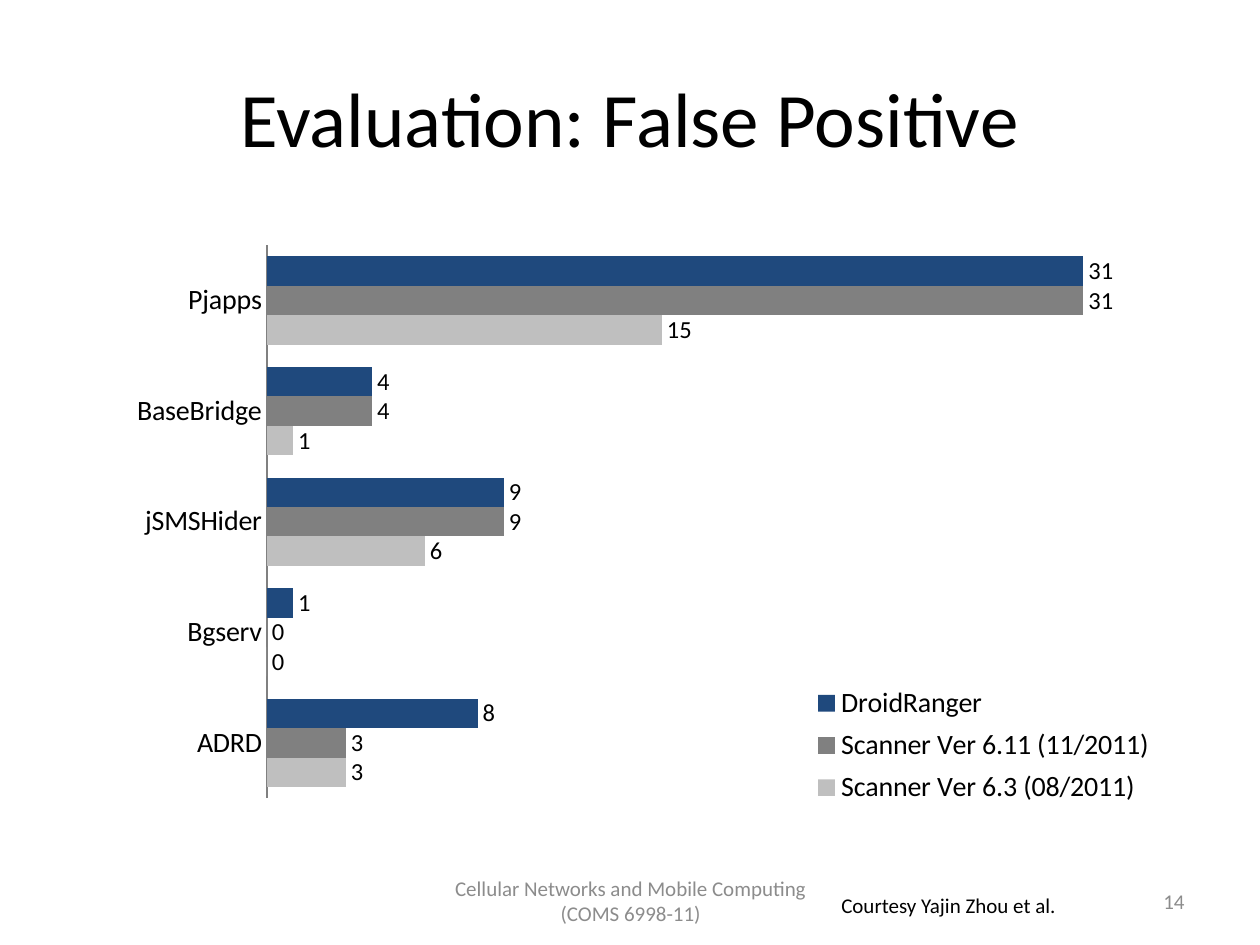
from dataclasses import dataclass
from typing import Any

from lxml import etree
from pptx import Presentation
from pptx import util as u
from pptx.chart.data import CategoryChartData
from pptx.dml.color import RGBColor
from pptx.enum import chart as chart_enum
from pptx.enum import text

FONT = "Calibri"
COLORS = {
    "text": "000000",
    "muted": "8C8C8C",
    "axis": "808080",
    "old_version": "BFBFBF",
    "new_version": "808080",
    "droid_ranger": "1F497D",
}
PLOT_LAYOUT = {"x": 0.176, "y": 0, "w": 0.822, "h": 0.945}
LEGEND_LAYOUT = {"x": 0.64, "y": 0.74, "w": 0.35, "h": 0.23}
CATEGORIES = ["ADRD", "Bgserv", "jSMSHider", "BaseBridge", "Pjapps"]


@dataclass(frozen=True)
class Box:
    left: float
    top: float
    width: float
    height: float

    def lengths(self) -> tuple:
        return tuple(u.Cm(value) for value in
                     (self.left, self.top, self.width, self.height))


@dataclass(frozen=True)
class Label:
    content: str
    box: Box
    color: str
    alignment: Any
    anchor: Any
    wrap: bool = True


@dataclass(frozen=True)
class Detector:
    name: str
    values: tuple
    color: str


DETECTORS = [
    Detector("Scanner Ver 6.3 (08/2011)", (3, 0, 6, 1, 15), "old_version"),
    Detector("Scanner Ver 6.11 (11/2011)", (3, 0, 9, 4, 31), "new_version"),
    Detector("DroidRanger", (8, 1, 9, 4, 31), "droid_ranger"),
]
LABELS = [
    Label("Cellular Networks and Mobile Computing (COMS 6998-11)",
          Box(8.69, 17.65, 8.05, 1.02), "muted",
          text.PP_ALIGN.CENTER, text.MSO_ANCHOR.MIDDLE),
    Label("14", Box(18.21, 17.65, 5.92, 1.02), "muted",
          text.PP_ALIGN.RIGHT, text.MSO_ANCHOR.MIDDLE),
    Label("Courtesy Yajin Zhou et al.", Box(16.71, 17.86, 4.93, 0.76), "text",
          text.PP_ALIGN.LEFT, text.MSO_ANCHOR.TOP, False),
]


def apply_format(target: Any, values: dict) -> None:
    for name, value in values.items():
        setattr(target, name, value)


def format_font(font: Any, size: int, color: str = "text") -> None:
    apply_format(font, {"name": FONT, "size": u.Pt(size), "bold": False})
    font.color.rgb = RGBColor.from_string(COLORS[color])


def write_text(shape: Any, content: str, size: int, color: str,
               alignment: Any, anchor: Any, wrap: bool = True) -> None:
    frame = shape.text_frame
    apply_format(frame, {"text": content, "word_wrap": wrap,
                         "vertical_anchor": anchor})
    paragraph = frame.paragraphs[0]
    paragraph.alignment = alignment
    format_font(paragraph.runs[0].font, size, color)


def add_title(slide: Any, content: str, box: Box) -> None:
    title = slide.shapes.title
    apply_format(title, dict(zip(("left", "top", "width", "height"),
                                 box.lengths())))
    write_text(title, content, 44, "text", text.PP_ALIGN.CENTER,
               text.MSO_ANCHOR.MIDDLE)


def add_label(slide: Any, label: Label) -> None:
    shape = slide.shapes.add_textbox(*label.box.lengths())
    write_text(shape, label.content, 12, label.color, label.alignment,
               label.anchor, label.wrap)


def manual_layout(parent: Any, fractions: dict, inner: bool = False) -> None:
    namespace = parent.nsmap["c"]
    for existing in parent.findall(f"{{{namespace}}}layout"):
        parent.remove(existing)
    layout = etree.Element(f"{{{namespace}}}layout")
    manual = etree.SubElement(layout, f"{{{namespace}}}manualLayout")
    settings = {"layoutTarget": "inner"} if inner else {}
    settings.update({"xMode": "edge", "yMode": "edge"}, **fractions)
    for name, value in settings.items():
        etree.SubElement(manual, f"{{{namespace}}}{name}", val=str(value))
    position = parent.find(f"{{{namespace}}}legendPos")
    if position is None:
        parent.insert(0, layout)
    else:
        position.addnext(layout)


def format_axes(chart: Any) -> None:
    apply_format(chart.value_axis, {
        "visible": False, "has_major_gridlines": False,
        "minimum_scale": 0, "maximum_scale": 35,
    })
    category_axis = chart.category_axis
    apply_format(category_axis, {
        "has_major_gridlines": False,
        "major_tick_mark": chart_enum.XL_TICK_MARK.NONE,
        "minor_tick_mark": chart_enum.XL_TICK_MARK.NONE,
    })
    format_font(category_axis.tick_labels.font, 16)
    line = category_axis.format.line
    line.width = u.Pt(1)
    line.color.rgb = RGBColor.from_string(COLORS["axis"])


def format_series(series: Any, detector: Detector) -> None:
    series.invert_if_negative = False
    series.format.fill.solid()
    series.format.fill.fore_color.rgb = RGBColor.from_string(
        COLORS[detector.color])
    labels = series.data_labels
    apply_format(labels, {
        "show_value": True,
        "position": chart_enum.XL_LABEL_POSITION.OUTSIDE_END,
    })
    format_font(labels.font, 14)


def add_detection_chart(slide: Any, box: Box) -> None:
    data = CategoryChartData(number_format="0")
    data.categories = CATEGORIES
    for detector in DETECTORS:
        data.add_series(detector.name, detector.values)
    chart = slide.shapes.add_chart(chart_enum.XL_CHART_TYPE.BAR_CLUSTERED,
                                   *box.lengths(), data).chart
    apply_format(chart, {"has_title": False, "has_legend": True})
    format_font(chart.font, 18)
    format_axes(chart)
    plot = chart.plots[0]
    apply_format(plot, {"gap_width": 75, "vary_by_categories": False})
    for series, detector in zip(plot.series, DETECTORS):
        format_series(series, detector)
    legend = chart.legend
    apply_format(legend, {
        "position": chart_enum.XL_LEGEND_POSITION.BOTTOM,
        "include_in_layout": False,
    })
    format_font(legend.font, 16)
    plot_area = chart.element.chart.plotArea
    manual_layout(plot_area, PLOT_LAYOUT, inner=True)
    manual_layout(chart.element.chart.legend, LEGEND_LAYOUT)


def main() -> None:
    presentation = Presentation()
    apply_format(presentation, {"slide_width": u.Cm(25.4),
                                "slide_height": u.Cm(19.05)})
    slide = presentation.slides.add_slide(presentation.slide_layouts[5])
    add_title(slide, "Evaluation: False Positive", Box(1.27, 0.76, 22.86, 3.18))
    add_detection_chart(slide, Box(1.4, 4.93, 22.61, 11.81))
    for label in LABELS:
        add_label(slide, label)
    presentation.save("out.pptx")


if __name__ == "__main__":
    main()
